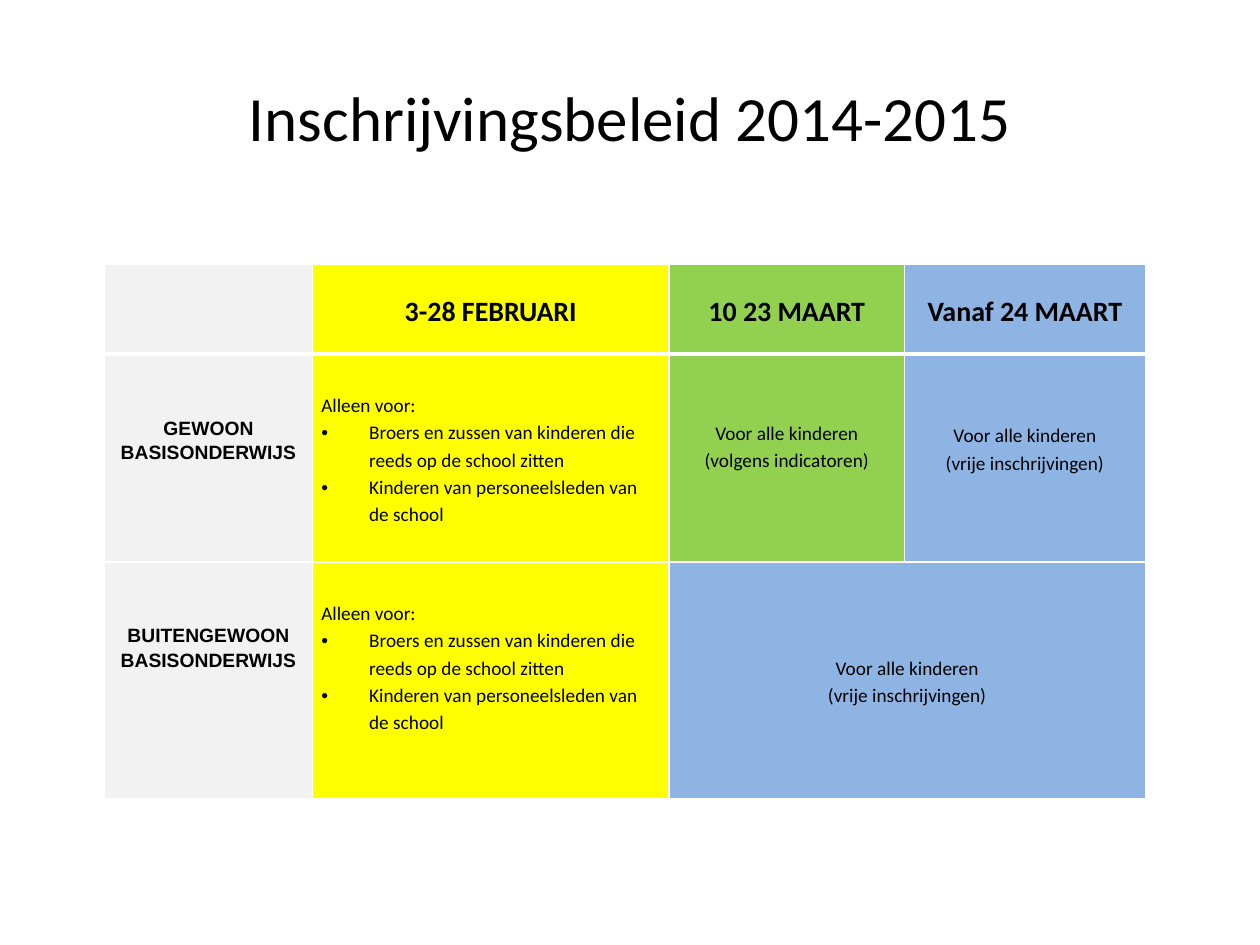
import pptx
import pptx.util
import pptx.dml.color
import pptx.enum.text
import pptx.oxml.ns
from lxml import etree

Inches = pptx.util.Inches
Pt = pptx.util.Pt
qn = pptx.oxml.ns.qn
ALIGN = pptx.enum.text.PP_ALIGN
ANCHOR = pptx.enum.text.MSO_ANCHOR

COLORS = {"text": "000000", "border": "FFFFFF", "grey": "F2F2F2",
          "yellow": "FFFF00", "green": "92D050", "blue": "8EB4E3"}

TITLE = "Inschrijvingsbeleid 2014-2015"
HEADERS = ["", "3-28 FEBRUARI", "10 23 MAART", "Vanaf 24 MAART"]
SIBLINGS_AND_STAFF = [
    "Alleen voor:",
    "Broers en zussen van kinderen die reeds op de school zitten",
    "Kinderen van personeelsleden van de school",
]
FREE = ["Voor alle kinderen", "(vrije inschrijvingen)"]
BY_INDICATOR = ["Voor alle kinderen", "(volgens indicatoren)"]
BODY = [
    [["GEWOON", "BASISONDERWIJS"], SIBLINGS_AND_STAFF, BY_INDICATOR, FREE],
    [["BUITENGEWOON", "BASISONDERWIJS"], SIBLINGS_AND_STAFF, FREE, []],
]
COLUMN_FILLS = ["grey", "yellow", "green", "blue"]
COLUMN_WIDTHS = [1.65, 2.83, 1.87, 1.91]
ROW_HEIGHTS = [0.71, 1.65, 1.88]
TOP_MARGINS = [0.48, 0.29, 0.51, 0.53]
TABLE_LEFT, TABLE_TOP = 0.83, 2.1


def rgb(name):
    return pptx.dml.color.RGBColor.from_string(COLORS[name])


def style_paragraph(paragraph, size, font="Calibri", bold=False, align=ALIGN.CENTER):
    paragraph.alignment = align
    for run in paragraph.runs:
        run.font.name = font
        run.font.size = Pt(size)
        run.font.bold = bold
        run.font.color.rgb = rgb("text")


def add_bullet(paragraph):
    properties = paragraph._p.get_or_add_pPr()
    properties.set("marL", str(Inches(0.38)))
    properties.set("indent", str(-Inches(0.38)))
    etree.SubElement(properties, qn("a:buFont"), typeface="Arial")
    etree.SubElement(properties, qn("a:buChar"), char="•")


def set_borders(cell, widths):
    properties = cell._tc.get_or_add_tcPr()
    for index, (side, width) in enumerate(widths.items()):
        line = etree.Element(qn("a:ln" + side), w=str(Pt(width)))
        fill = etree.SubElement(line, qn("a:solidFill"))
        etree.SubElement(fill, qn("a:srgbClr"), val=COLORS["border"])
        properties.insert(index, line)


def fill_cell(cell, lines, fill, size=11, font="Calibri", bold=False,
              bulleted=False, top=0.08, anchor=ANCHOR.TOP):
    cell.fill.solid()
    cell.fill.fore_color.rgb = rgb(fill)
    cell.margin_left = cell.margin_right = Inches(0.07)
    cell.margin_top, cell.margin_bottom = Inches(top), Inches(0.08)
    cell.vertical_anchor = anchor
    cell.text_frame.text = "\n".join(lines)
    for index, paragraph in enumerate(cell.text_frame.paragraphs):
        paragraph.line_spacing = 1.15
        if bulleted and index > 0:
            add_bullet(paragraph)
        style_paragraph(paragraph, size, font, bold,
                        ALIGN.LEFT if bulleted else ALIGN.CENTER)


def add_title(slide):
    title = slide.shapes.add_textbox(Inches(0.5), Inches(0.3), Inches(9), Inches(1.25))
    frame = title.text_frame
    frame.word_wrap = True
    frame.vertical_anchor = ANCHOR.MIDDLE
    frame.text = TITLE
    style_paragraph(frame.paragraphs[0], 36)


def add_schedule(slide):
    table = slide.shapes.add_table(
        len(ROW_HEIGHTS), len(COLUMN_WIDTHS), Inches(TABLE_LEFT), Inches(TABLE_TOP),
        Inches(sum(COLUMN_WIDTHS)), Inches(sum(ROW_HEIGHTS))).table
    for column, width in zip(table.columns, COLUMN_WIDTHS):
        column.width = Inches(width)
    for row, height in zip(table.rows, ROW_HEIGHTS):
        row.height = Inches(height)

    for column, (header, fill) in enumerate(zip(HEADERS, COLUMN_FILLS)):
        fill_cell(table.cell(0, column), [header], fill, 16, bold=True,
                  anchor=ANCHOR.MIDDLE)
    for row, contents in enumerate(BODY, start=1):
        for column, lines in enumerate(contents):
            is_label = column == 0
            fill_cell(table.cell(row, column), lines, COLUMN_FILLS[column],
                      font="Arial" if is_label else "Calibri", bold=is_label,
                      bulleted=column == 1, top=TOP_MARGINS[column])

    shared = table.cell(2, 2)
    shared.merge(table.cell(2, 3))
    fill_cell(shared, FREE, "blue", anchor=ANCHOR.MIDDLE)

    for row in range(len(ROW_HEIGHTS)):
        for column in range(len(COLUMN_WIDTHS)):
            set_borders(table.cell(row, column), {
                "L": 1, "R": 1, "T": 3 if row == 1 else 1, "B": 3 if row == 0 else 1})


def main():
    presentation = pptx.Presentation()
    presentation.slide_width = Inches(10)
    presentation.slide_height = Inches(7.5)
    slide = presentation.slides.add_slide(presentation.slide_layouts[6])
    add_title(slide)
    add_schedule(slide)
    presentation.save("out.pptx")


if __name__ == "__main__":
    main()
